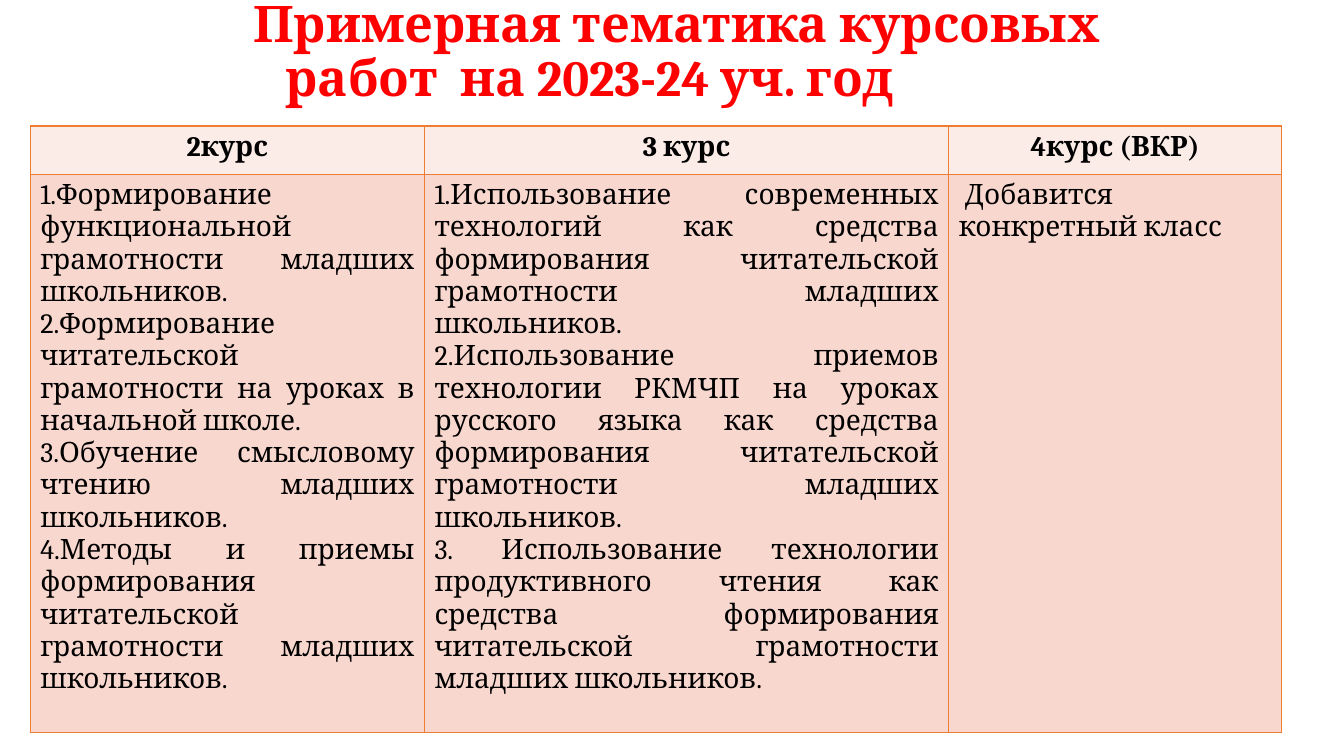
from lxml.etree import SubElement
from pptx import Presentation
from pptx.dml.color import RGBColor
from pptx.enum.text import MSO_ANCHOR, MSO_AUTO_SIZE, PP_ALIGN
from pptx.oxml.ns import qn
from pptx.util import Inches, Pt

WIDE, HIGH = Inches(13.33), Inches(7.5)
FONT = "Cambria"
COLORS = {"title": "FF0000", "text": "000000", "head": "FCECE8",
          "body": "F8D7CE", "line": "ED7D31"}

TITLE = "Примерная тематика курсовых работ  на 2023-24 уч. год"
HEADS = ["2курс", "3 курс", "4курс (ВКР)"]
TOPICS = [
    ["1.Формирование функциональной грамотности младших школьников.",
     "2.Формирование читательской грамотности на уроках в начальной школе.",
     "3.Обучение смысловому чтению младших школьников.",
     "4.Методы и приемы формирования читательской грамотности младших "
     "школьников."],
    ["1.Использование современных технологий как средства формирования "
     "читательской грамотности младших школьников.",
     "2.Использование приемов технологии РКМЧП на уроках русского языка "
     "как средства формирования читательской грамотности младших школьников.",
     "3. Использование технологии продуктивного чтения как средства "
     "формирования читательской грамотности младших школьников."],
    [" Добавится конкретный класс"],
]
ALIGNS = [PP_ALIGN.JUSTIFY, PP_ALIGN.JUSTIFY, PP_ALIGN.LEFT]
COLS = [3.91, 5.2, 3.3]
ROWS = [0.48, 5.54]


def style(par, size, color, bold, align):
    par.alignment = align
    font = par.font
    font.name, font.size, font.bold = FONT, Pt(size), bold
    font.color.rgb = RGBColor.from_string(COLORS[color])


def add_title(slide):
    title = slide.shapes.title
    title.left, title.top = Inches(2.17), Inches(0.3)
    title.width, title.height = Inches(9), Inches(0.46)
    frame = title.text_frame
    frame.text = TITLE
    frame.word_wrap = True
    frame.auto_size = MSO_AUTO_SIZE.NONE
    frame.vertical_anchor = MSO_ANCHOR.MIDDLE
    par = frame.paragraphs[0]
    style(par, 36, "title", True, PP_ALIGN.LEFT)
    par.line_spacing = 0.9
    # Hanging indent places each of the two lines
    props = par._p.get_or_add_pPr()
    props.set("marL", str(Inches(0.56)))
    props.set("indent", str(Inches(-0.32)))


def add_edges(cell):
    props = cell._tc.get_or_add_tcPr()
    for side in ("lnL", "lnR", "lnT", "lnB"):
        edge = SubElement(props, qn(f"a:{side}"), w=str(Pt(1)))
        fill = SubElement(edge, qn("a:solidFill"))
        SubElement(fill, qn("a:srgbClr"), val=COLORS["line"])


def fill_cell(cell, lines, color, bold, align):
    add_edges(cell)
    cell.fill.solid()
    cell.fill.fore_color.rgb = RGBColor.from_string(COLORS[color])
    cell.text = "\n".join(lines)
    for par in cell.text_frame.paragraphs:
        style(par, 20, "text", bold, align)


def add_grid(slide):
    table = slide.shapes.add_table(
        len(ROWS), len(COLS), Inches(0.3), Inches(1.25),
        Inches(sum(COLS)), Inches(sum(ROWS))).table
    for row, tall in zip(table.rows, ROWS):
        row.height = Inches(tall)
    for i, wide in enumerate(COLS):
        table.columns[i].width = Inches(wide)
        fill_cell(table.cell(0, i), [HEADS[i]], "head", True, PP_ALIGN.CENTER)
        fill_cell(table.cell(1, i), TOPICS[i], "body", False, ALIGNS[i])


def main():
    deck = Presentation()
    deck.slide_width, deck.slide_height = WIDE, HIGH
    # Title-only layout
    slide = deck.slides.add_slide(deck.slide_layouts[5])
    add_title(slide)
    add_grid(slide)
    deck.save("out.pptx")


if __name__ == "__main__":
    main()
